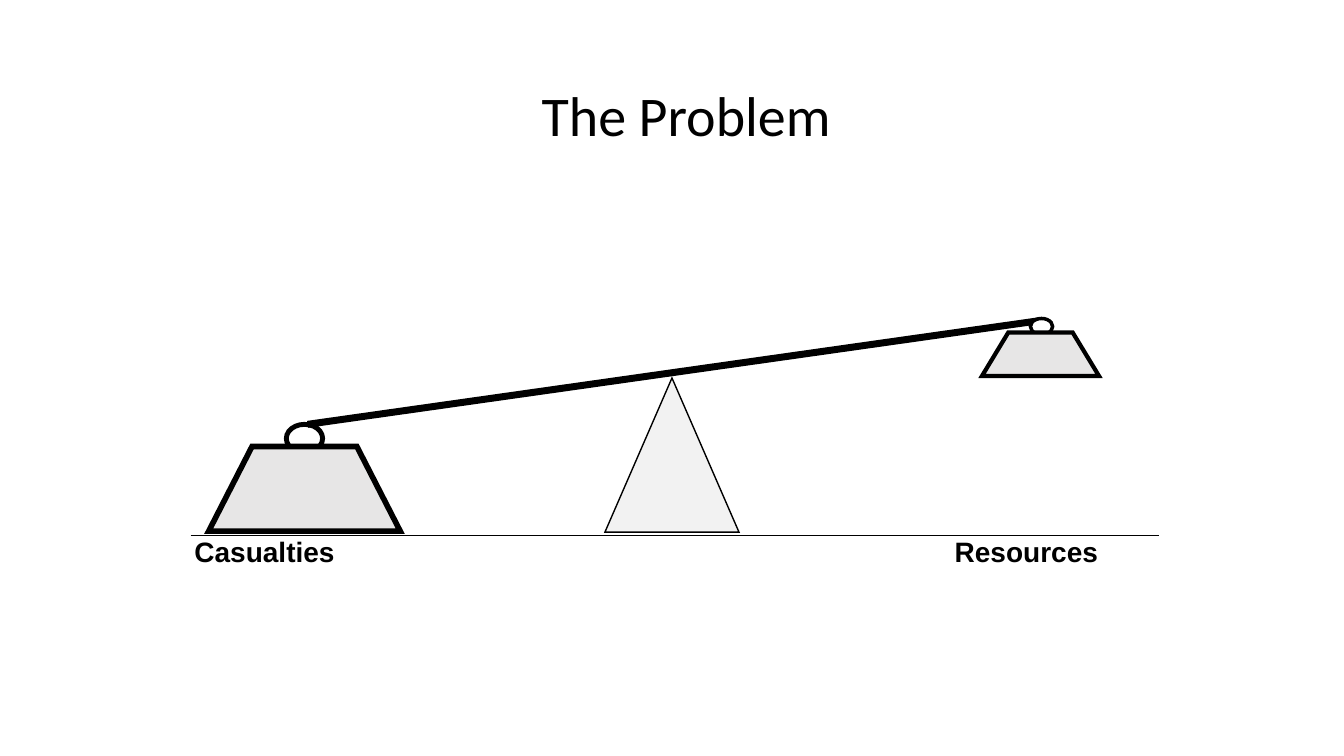
from dataclasses import dataclass

from lxml import etree
from pptx import Presentation, util as u
from pptx.dml.color import RGBColor
from pptx.enum import shapes, text
from pptx.oxml.ns import qn


@dataclass(frozen=True)
class Theme:
    """Colours, fonts and type sizes of the slide."""
    ink: str = "000000"
    paper: str = "FFFFFF"
    metal: str = "E7E6E6"
    head: str = "Calibri"
    body: str = "Arial"
    title: int = 40
    label: int = 20


THEME = Theme()


def box(*sides):
    """Turn inches into lengths."""
    return [u.Inches(side) for side in sides]


def paint(shape, fill, width, alpha=100):
    """Give a shape its fill and a sharp-cornered outline."""
    shape.shadow.inherit = False
    shape.fill.solid()
    shape.fill.fore_color.rgb = RGBColor.from_string(fill)
    if alpha < 100:
        color = shape.fill._xPr.find(".//" + qn("a:srgbClr"))
        etree.SubElement(color, qn("a:alpha"), val=str(alpha * 1000))
    shape.line.width = u.Pt(width)
    shape.line.color.rgb = RGBColor.from_string(THEME.ink)
    line = shape.line._get_or_add_ln()
    etree.SubElement(line, qn("a:miter"), lim="800000")


def add_weight(slide, ring, base, slope, ring_line, base_line):
    """Draw a weight as a ring behind a trapezoid."""
    oval = slide.shapes.add_shape(shapes.MSO_SHAPE.OVAL, *box(*ring))
    paint(oval, THEME.paper, ring_line)
    left, top, width, height = base
    right, foot = left + width, top + height
    corners = [(left + slope, top), (right - slope, top), (right, foot)]
    outline = slide.shapes.build_freeform(*box(left, foot))
    outline.add_line_segments([box(*point) for point in corners], close=True)
    paint(outline.convert_to_shape(), THEME.metal, base_line)


def add_line(slide, start, end, width):
    """Draw a straight line between two points."""
    line = slide.shapes.add_connector(
        shapes.MSO_CONNECTOR.STRAIGHT, *box(*start, *end))
    line.line.width = u.Pt(width)
    line.line.color.rgb = RGBColor.from_string(THEME.ink)
    etree.SubElement(line._element.spPr, qn("a:effectLst"))


def add_text(slide, words, place, font, size, bold=False):
    """Place one line of text and return its frame."""
    frame = slide.shapes.add_textbox(*box(*place)).text_frame
    frame.text = words
    run = frame.paragraphs[0].runs[0]
    run.font.name, run.font.size, run.font.bold = font, u.Pt(size), bold
    run.font.color.rgb = RGBColor.from_string(THEME.ink)
    return frame


def add_title(slide, words):
    """Place the title, set slightly right of centre."""
    frame = add_text(slide, words, (0, 0.38, 13.33, 1.5),
                     THEME.head, THEME.title)
    frame.word_wrap = True
    frame.margin_left = u.Inches(0.38)
    frame.vertical_anchor = text.MSO_ANCHOR.MIDDLE
    frame.paragraphs[0].alignment = text.PP_ALIGN.CENTER


def add_label(slide, words, left, width):
    """Place a bold label under the ground line."""
    frame = add_text(slide, words, (left, 5.25, width, 0.44),
                     THEME.body, THEME.label, True)
    frame.word_wrap = False
    frame.auto_size = text.MSO_AUTO_SIZE.SHAPE_TO_FIT_TEXT


def main():
    """Build the slide with the tilted balance."""
    deck = Presentation()
    deck.slide_width, deck.slide_height = box(13.33, 7.5)
    slide = deck.slides.add_slide(deck.slide_layouts[6])
    add_weight(slide, (2.84, 4.21, 0.36, 0.28), (2.07, 4.43, 1.9, 0.84),
               0.43, 3.5, 4)
    add_line(slide, (3.05, 4.21), (10.32, 3.18), 5)
    add_weight(slide, (10.22, 3.16, 0.22, 0.16), (9.74, 3.3, 1.16, 0.43),
               0.26, 2.5, 3)
    pivot = slide.shapes.add_shape(
        shapes.MSO_SHAPE.ISOSCELES_TRIANGLE, *box(6, 3.75, 1.33, 1.53))
    paint(pivot, THEME.metal, 1, alpha=50)
    add_title(slide, "The Problem")
    add_line(slide, (1.89, 5.31), (11.5, 5.31), 1)
    add_label(slide, "Casualties", 1.83, 1.6)
    add_label(slide, "Resources", 9.37, 1.64)
    deck.save("out.pptx")


if __name__ == "__main__":
    main()
